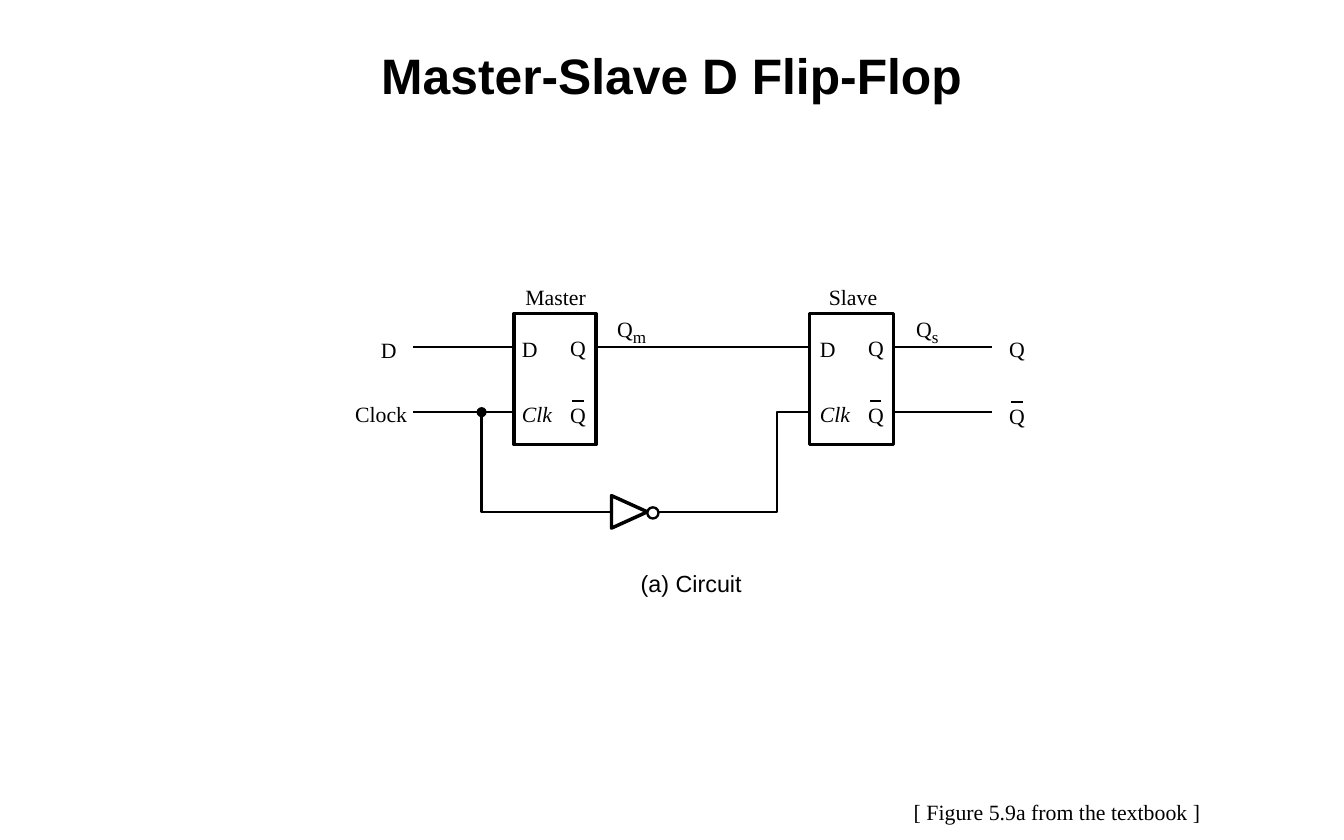
from lxml import etree
from pptx import Presentation
from pptx.dml.color import RGBColor
from pptx.enum.shapes import MSO_CONNECTOR, MSO_SHAPE
from pptx.enum.text import MSO_ANCHOR, MSO_AUTO_SIZE, PP_ALIGN
from pptx.oxml.ns import qn
from pptx.util import Inches, Pt

STRAIGHT = MSO_CONNECTOR.STRAIGHT
RECTANGLE, OVAL = MSO_SHAPE.RECTANGLE, MSO_SHAPE.OVAL
MIDDLE, TOP = MSO_ANCHOR.MIDDLE, MSO_ANCHOR.TOP
CENTER = PP_ALIGN.CENTER
FIT, NO_FIT = MSO_AUTO_SIZE.SHAPE_TO_FIT_TEXT, MSO_AUTO_SIZE.NONE

COLORS = {"ink": "000000", "paper": "FFFFFF"}
TITLE = {"name": "Arial", "size": Pt(32), "bold": True}
CAPTION = {"name": "Arial", "size": Pt(15)}
SIGNAL = {"name": "Times New Roman", "size": Pt(14)}
CLOCK_PIN = {**SIGNAL, "italic": True}
SUBSCRIPT = {**SIGNAL, "size": Pt(11)}

# Heights of the three wiring levels
DATA_Y, CLOCK_Y, INVERTER_Y = 3.1, 3.68, 4.57
LATCH_TOP, LATCH_HEIGHT = 2.8, 1.17
MASTER_LEFT, MASTER_RIGHT = 4.59, 5.32
SLAVE_LEFT, SLAVE_RIGHT = 7.23, 7.98
INPUT_X, OUTPUT_X = 3.69, 8.86
BRANCH_X, RETURN_X = 4.3, 6.94


def color(key):
    return RGBColor.from_string(COLORS[key])


def format_font(font, style):
    for attribute, value in style.items():
        setattr(font, attribute, value)
    font.color.rgb = color("ink")


def add_label(slide, text, left, top, width, height=0.24, style=SIGNAL, inset=0):
    label = slide.shapes.add_textbox(
        Inches(left), Inches(top), Inches(width), Inches(height))
    frame = label.text_frame
    settings = {"word_wrap": False, "auto_size": FIT, "vertical_anchor": TOP,
                "margin_left": Inches(inset), "margin_right": Inches(inset),
                "margin_top": Inches(inset / 2), "margin_bottom": Inches(inset / 2)}
    for attribute, value in settings.items():
        setattr(frame, attribute, value)
    run = frame.paragraphs[0].add_run()
    run.text = text
    format_font(run.font, style)


def style_shape(shape, fill, weight):
    shape.shadow.inherit = False
    if fill:
        shape.fill.solid()
        shape.fill.fore_color.rgb = color(fill)
    else:
        shape.fill.background()
    shape.line.color.rgb = color("ink")
    shape.line.width = Pt(weight)


def add_preset(slide, kind, left, top, width, height, fill="paper", weight=2.25):
    shape = slide.shapes.add_shape(
        kind, Inches(left), Inches(top), Inches(width), Inches(height))
    style_shape(shape, fill, weight)


def add_outline(slide, points, close=False, fill=None, weight=1.5):
    start, *rest = [(Inches(x), Inches(y)) for x, y in points]
    builder = slide.shapes.build_freeform(*start)
    builder.add_line_segments(rest, close=close)
    style_shape(builder.convert_to_shape(), fill, weight)


def add_wire(slide, x1, x2, y, weight=1.5):
    wire = slide.shapes.add_connector(
        STRAIGHT, Inches(x1), Inches(y), Inches(x2), Inches(y))
    wire.line.color.rgb = color("ink")
    wire.line.width = Pt(weight)
    etree.SubElement(wire._element.spPr, qn("a:effectLst"))


def add_inverted_q(slide, left, top):
    add_label(slide, "Q", left, top, 0.19)
    add_wire(slide, left + 0.02, left + 0.12, top - 0.01, 1.38)


def add_subscripted_q(slide, subscript, left, width):
    add_label(slide, "Q", left, 2.82, 0.19)
    add_label(slide, subscript, left + 0.14, 2.91, width, 0.19, SUBSCRIPT)


def add_latch(slide, left, right, pin_left, name, name_left, name_width):
    add_preset(slide, RECTANGLE, left, LATCH_TOP, right - left, LATCH_HEIGHT)
    add_label(slide, name, name_left, 2.53, name_width)
    add_label(slide, "D", pin_left, 3, 0.19)
    add_label(slide, "Clk", pin_left, 3.58, 0.33, style=CLOCK_PIN)
    add_label(slide, "Q", pin_left + 0.43, 2.99, 0.19)
    add_inverted_q(slide, pin_left + 0.43, 3.59)


def add_inverter(slide):
    base, tip, half = 5.46, 5.78, 0.145
    add_outline(slide, [(tip, INVERTER_Y), (base, INVERTER_Y + half),
                        (base, INVERTER_Y - half)], True, "paper", 2.25)
    add_preset(slide, OVAL, tip, 4.53, 0.1, 0.1, weight=1.5)


def add_title(slide, text):
    title = slide.shapes.title
    title.left, title.top = Inches(1), Inches(0.33)
    title.width, title.height = Inches(10), Inches(0.67)
    title.text = text
    title.text_frame.vertical_anchor = MIDDLE
    title.text_frame.auto_size = NO_FIT
    paragraph = title.text_frame.paragraphs[0]
    paragraph.alignment = CENTER
    format_font(paragraph.runs[0].font, TITLE)


def main():
    deck = Presentation()
    deck.slide_width, deck.slide_height = Inches(12), Inches(7.5)
    slide = deck.slides.add_slide(deck.slide_layouts[5])
    add_title(slide, "Master-Slave D Flip-Flop")

    # Clock path through the inverter
    add_outline(slide, [(INPUT_X, CLOCK_Y), (BRANCH_X, CLOCK_Y),
                        (BRANCH_X, INVERTER_Y), (5.17, INVERTER_Y)])
    add_outline(slide, [(SLAVE_LEFT, CLOCK_Y), (RETURN_X, CLOCK_Y),
                        (RETURN_X, INVERTER_Y), (6.07, INVERTER_Y)])

    # Straight wires
    for x1, x2, y in [(INPUT_X, MASTER_LEFT, DATA_Y),
                      (BRANCH_X, MASTER_LEFT, CLOCK_Y),
                      (MASTER_RIGHT, SLAVE_LEFT, DATA_Y),
                      (SLAVE_RIGHT, OUTPUT_X, DATA_Y),
                      (SLAVE_RIGHT, OUTPUT_X, CLOCK_Y),
                      (5.17, 5.46, INVERTER_Y),
                      (5.84, 6.07, INVERTER_Y)]:
        add_wire(slide, x1, x2, y)

    # Latches, inverter and clock junction
    add_latch(slide, MASTER_LEFT, MASTER_RIGHT, 4.66, "Master", 4.69, 0.55)
    add_latch(slide, SLAVE_LEFT, SLAVE_RIGHT, 7.32, "Slave", 7.4, 0.49)
    add_inverter(slide)
    add_preset(slide, OVAL, BRANCH_X - 0.04, CLOCK_Y - 0.04, 0.08, 0.08, "ink", 0.75)

    # Inputs, outputs and stage signals
    add_label(slide, "D", 3.4, 3.01, 0.19)
    add_label(slide, "Clock", 3.17, 3.58, 0.52)
    add_label(slide, "Q", 9.01, 3, 0.19)
    add_inverted_q(slide, 9.01, 3.6)
    add_subscripted_q(slide, "m", 5.51, 0.16)
    add_subscripted_q(slide, "s", 8.18, 0.1)

    # Caption and reference
    add_label(slide, "(a) Circuit", 5.72, 5.08, 0.96, 0.25, CAPTION)
    add_label(slide, "[ Figure 5.9a from the textbook ]", 8.06, 7.08, 2.78, 0.34,
              inset=0.1)

    deck.save("out.pptx")


if __name__ == "__main__":
    main()
